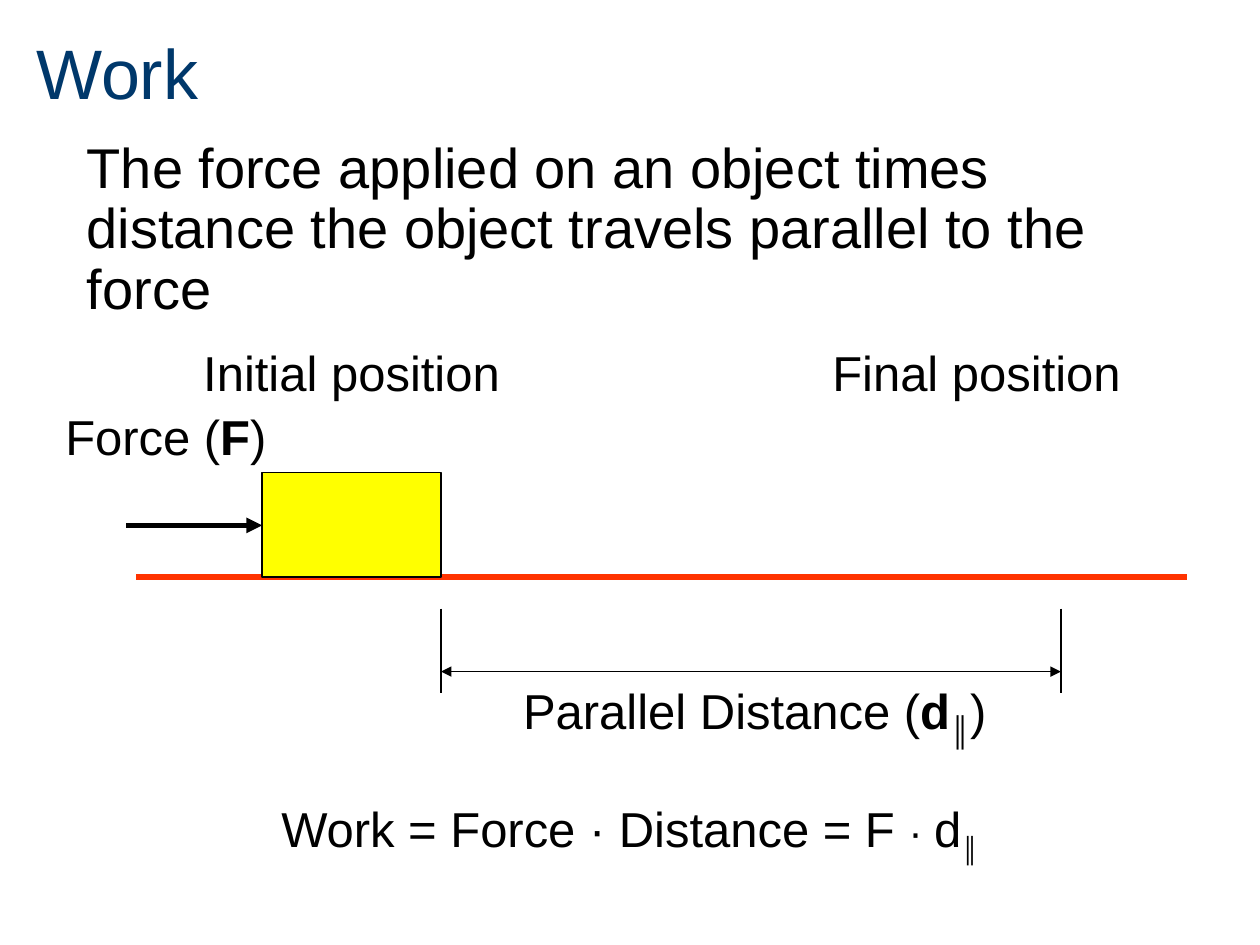
import pptx
import pptx.chart.data
import pptx.dml.color
import pptx.enum.shapes
import pptx.enum.text
import pptx.oxml.ns
import pptx.util
import lxml.etree

Inches = pptx.util.Inches
Pt = pptx.util.Pt
qn = pptx.oxml.ns.qn
ALIGN = pptx.enum.text.PP_ALIGN
ANCHOR = pptx.enum.text.MSO_ANCHOR


def tint(color, code):
    color.rgb = pptx.dml.color.RGBColor.from_string(code)


deck = pptx.Presentation()
deck.slide_width = Inches(10)
deck.slide_height = Inches(7.5)
slide = deck.slides.add_slide(deck.slide_layouts[6])
shapes = slide.shapes

left, right = 3.5, 8.42
floor, mid, span = 4.58, 4.17, 5.33
lines = [
    (1.08, floor, 9.42, floor, "FF3300", 3, []),
    (left, 4.83, left, 5.5, "000000", 0.75, []),
    (right, 4.83, right, 5.5, "000000", 0.75, []),
    (left, span, right, span, "000000", 0.75, ["headEnd", "tailEnd"]),
    (1, mid, 2.08, mid, "000000", 3, ["tailEnd"]),
]
for x1, y1, x2, y2, code, width, ends in lines:
    line = shapes.add_connector(
        pptx.enum.shapes.MSO_CONNECTOR.STRAIGHT,
        Inches(x1), Inches(y1), Inches(x2), Inches(y2))
    tint(line.line.color, code)
    line.line.width = Pt(width)
    for end in ends:
        lxml.etree.SubElement(line.line._get_or_add_ln(), qn("a:" + end), type="triangle")
    lxml.etree.SubElement(line._element.spPr, qn("a:effectLst"))

block = shapes.add_shape(
    pptx.enum.shapes.MSO_SHAPE.RECTANGLE,
    Inches(2.08), Inches(3.75), Inches(1.42), Inches(0.83))
block.shadow.inherit = False
block.fill.solid()
tint(block.fill.fore_color, "FFFF00")
tint(block.line.color, "000000")
block.line.width = Pt(0.75)

labels = [
    (1.51, 2.67, 2.56, ALIGN.CENTER, [("Initial position", 28, False, False)]),
    (6.5, 2.67, 2.5, ALIGN.CENTER, [("Final position", 28, False, False)]),
    (4.03, 5.35, 3.92, ALIGN.CENTER, [
        ("Parallel Distance (", 28, False, False), ("d", 28, True, False),
        ("║", 28, True, True), (")", 28, False, False)]),
    (0.42, 3.18, 1.8, ALIGN.LEFT, [
        ("Force (", 28, False, False), ("F", 28, True, False), (")", 28, False, False)]),
    (2.09, 6.29, 5.82, ALIGN.CENTER, [
        ("Work = Force · Distance = F ", 28, False, False), ("· ", 24, False, False),
        ("d", 28, False, False), ("║", 24, True, True)]),
]
for x, y, width, align, parts in labels:
    box = shapes.add_textbox(Inches(x), Inches(y), Inches(width), Inches(0.57))
    box.text_frame.word_wrap = False
    para = box.text_frame.paragraphs[0]
    para.alignment = align
    for text, size, bold, sub in parts:
        run = para.add_run()
        run.text = text
        run.font.name = "Arial"
        run.font.size = Pt(size)
        run.font.bold = bold
        tint(run.font.color, "000000")
        if sub:
            run.font._element.set("baseline", "-25000")

heads = [
    ("Work", 0.19, 0.19, 10, 0.76, 40, "00386B", ANCHOR.MIDDLE, 1),
    ("The force applied on an object times distance the object travels parallel to the force",
     0.59, 1.06, 8.9, 1.56, 32, "000000", ANCHOR.TOP, 0.9),
]
for text, x, y, width, height, size, code, anchor, space in heads:
    box = shapes.add_textbox(Inches(x), Inches(y), Inches(width), Inches(height))
    frame = box.text_frame
    frame.word_wrap = True
    frame.vertical_anchor = anchor
    frame.text = text
    para = frame.paragraphs[0]
    para.line_spacing = space
    font = para.runs[0].font
    font.name = "Arial"
    font.size = Pt(size)
    tint(font.color, code)

deck.save("out.pptx")
